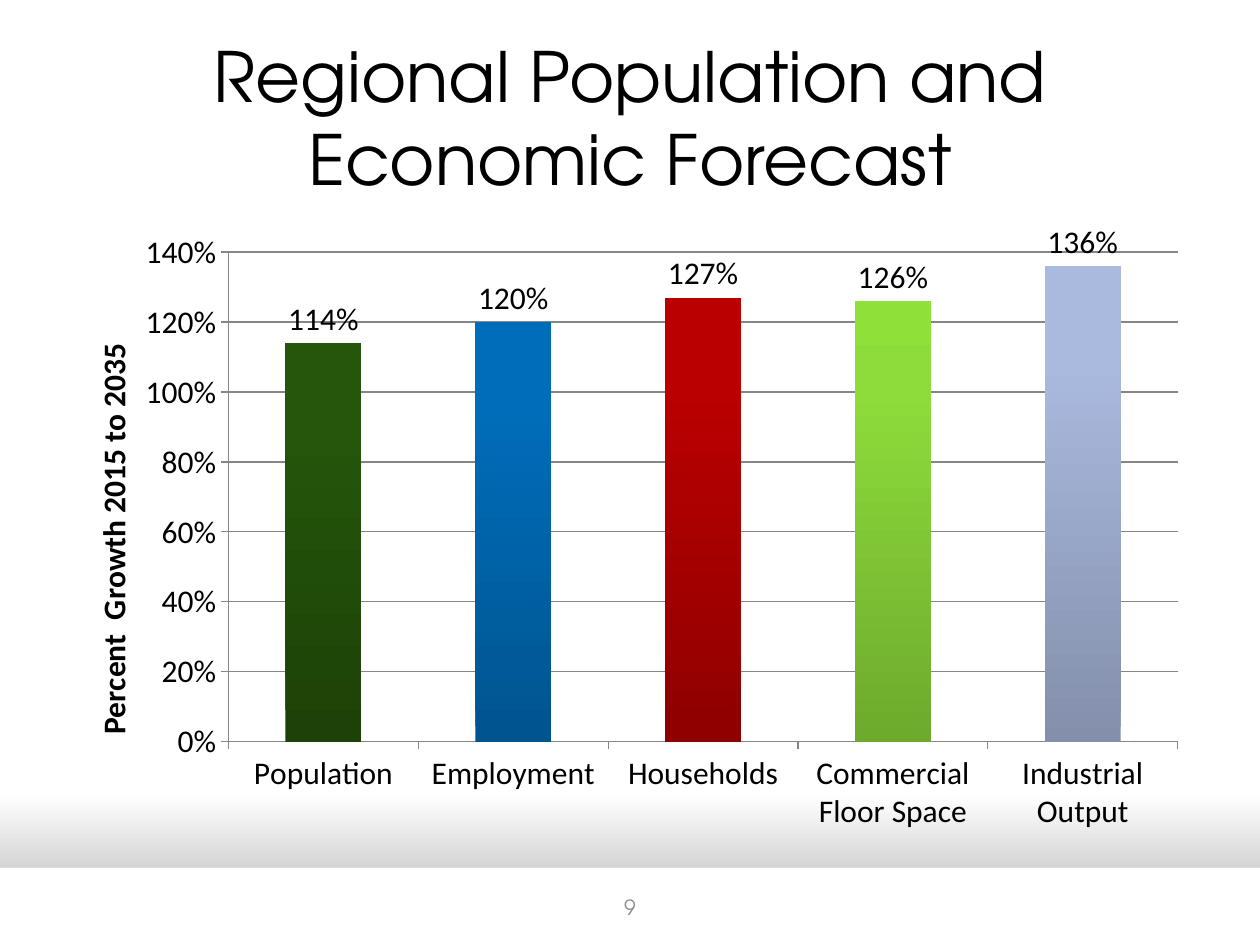
from copy import deepcopy

from pptx import Presentation
from pptx import util as u
from pptx.chart.data import CategoryChartData
from pptx.dml.color import RGBColor
from pptx.enum import chart as ch, shapes, text
from pptx.oxml import parse_xml
from pptx.oxml.ns import nsdecls, qn

PX = u.Inches(1) // 126


def rgb(value):
    return RGBColor.from_string(value)


def gradient(fill, stops, angle):
    fill.gradient()
    fill.gradient_angle = angle
    last = fill.gradient_stops[-1]._gs
    for _ in range(len(stops) - 2):
        last.addnext(deepcopy(last))
    for stop, (position, color) in zip(fill.gradient_stops, stops):
        stop.position = position / 100
        stop.color.rgb = rgb(color)


def place(parent, index, target="", **fractions):
    """Give a chart part a manual layout, in fractions of the chart."""
    old = parent.find(qn("c:layout"))
    if old is not None:
        parent.remove(old)
    inner = f'<c:layoutTarget val="{target}"/>' if target else ""
    modes = "".join(f'<c:{k}Mode val="edge"/>' for k in "xy")
    sizes = "".join(f'<c:{k} val="{v}"/>' for k, v in fractions.items())
    parent.insert(index, parse_xml(
        f'<c:layout {nsdecls("c")}><c:manualLayout>{inner}{modes}{sizes}'
        '</c:manualLayout></c:layout>'))


class Deck:
    heading = "TeX Gyre Adventor"
    body = "Calibri"
    black = "000000"
    gray = "868686"

    def __init__(self, width, height):
        self.prs = Presentation()
        self.prs.slide_width, self.prs.slide_height = width * PX, height * PX
        self.s = self.prs.slides.add_slide(self.prs.slide_layouts[5])

    def font(self, font, name, size, color, bold=False):
        font.name, font.size, font.bold = name, u.Pt(size), bold
        font.color.rgb = rgb(color)

    def set_text(self, sp, content, size, color):
        tf = sp.text_frame
        tf.text = content
        tf.word_wrap = True
        tf.auto_size = text.MSO_AUTO_SIZE.NONE
        tf.vertical_anchor = text.MSO_ANCHOR.MIDDLE
        p = tf.paragraphs[0]
        p.alignment = text.PP_ALIGN.CENTER
        self.font(p.runs[0].font, self.heading, size, color)

    def title(self, content, x, y, w, h):
        sp = self.s.shapes.title
        sp.left, sp.top, sp.width, sp.height = (n * PX for n in (x, y, w, h))
        self.set_text(sp, content, 39.6, self.black)

    def label(self, content, x, y, w, h, size, color):
        sp = self.s.shapes.add_textbox(*(n * PX for n in (x, y, w, h)))
        self.set_text(sp, content, size, color)

    def band(self, x, y, w, h, color):
        sp = self.s.shapes.add_shape(
            shapes.MSO_SHAPE.RECTANGLE, *(n * PX for n in (x, y, w, h)))
        sp.shadow.inherit = False
        sp.fill.solid()
        sp.fill.fore_color.rgb = rgb(color)
        sp.line.fill.background()

    def column_chart(self, bars, axis_title, x, y, w, h):
        data = CategoryChartData(number_format="0%")
        data.categories = [name for name, _, _ in bars]
        data.add_series("Series 1", [value for _, value, _ in bars])
        chart = self.s.shapes.add_chart(
            ch.XL_CHART_TYPE.COLUMN_CLUSTERED,
            *(n * PX for n in (x, y, w, h)), data).chart
        chart.has_legend = chart.has_title = False
        self.font(chart.font, self.body, 18, self.black)

        # Axes
        cat, val = chart.category_axis, chart.value_axis
        val.minimum_scale, val.maximum_scale, val.major_unit = 0, 1.4, 0.2
        val.tick_labels.number_format = "0%"
        val.tick_labels.number_format_is_linked = False
        val.has_major_gridlines = True
        for line in (cat.format.line, val.format.line,
                     val.major_gridlines.format.line):
            line.color.rgb = rgb(self.gray)
            line.width = u.Pt(0.75)
        for axis in (cat, val):
            axis.major_tick_mark = ch.XL_TICK_MARK.OUTSIDE
        tf = val.axis_title.text_frame
        tf.text = axis_title
        self.font(tf.paragraphs[0].runs[0].font, self.body, 18, self.black, True)
        body = tf._txBody.find(qn("a:bodyPr"))
        body.set("rot", "-5400000")
        body.set("vert", "horz")
        place(val.axis_title._element, 1, x=0.02, y=0.2)

        # Columns and their labels
        plot = chart.plots[0]
        plot.gap_width = 150
        plot.vary_by_categories = False
        plot.has_data_labels = True
        labels = plot.data_labels
        labels.show_value = True
        labels.number_format = "0%"
        labels.number_format_is_linked = False
        labels.position = ch.XL_LABEL_POSITION.OUTSIDE_END
        for i, (_, _, colors) in enumerate(bars):
            point = plot.series[0].points[i]
            gradient(point.format.fill, list(zip((0, 80, 100), colors)), 90)
        place(chart._chartSpace.chart.plotArea, 0, "inner",
              x=0.146, y=0.066, w=0.837, h=0.765)


# Name, growth, gradient from bottom to top
BARS = [
    ("Population", 1.14, ("1D4208", "25560B", "255809")),
    ("Employment", 1.20, ("00548F", "006DBA", "006DBB")),
    ("Households", 1.27, ("8F0000", "BA0000", "BB0000")),
    ("Commercial Floor Space", 1.26, ("6DAA2D", "8EDC3B", "8FE038")),
    ("Industrial Output", 1.36, ("838FAB", "AAB9DE", "ABBAE0")),
]


def main():
    deck = Deck(1260, 945)

    # Background and footer band
    gradient(deck.s.background.fill, [(84, "FFFFFF"), (100, "A6A6A6")], 270)
    deck.band(0, 868, 1260, 77, "FFFFFF")

    # Title, chart and page number
    deck.title("Regional Population and Economic Forecast", 63, 38, 1134, 157)
    deck.column_chart(BARS, "Percent  Growth 2015 to 2035", 63, 210, 1134, 640)
    deck.label("9", 483, 882, 294, 50, 12, "8C8C8C")

    deck.prs.save("out.pptx")


if __name__ == "__main__":
    main()
